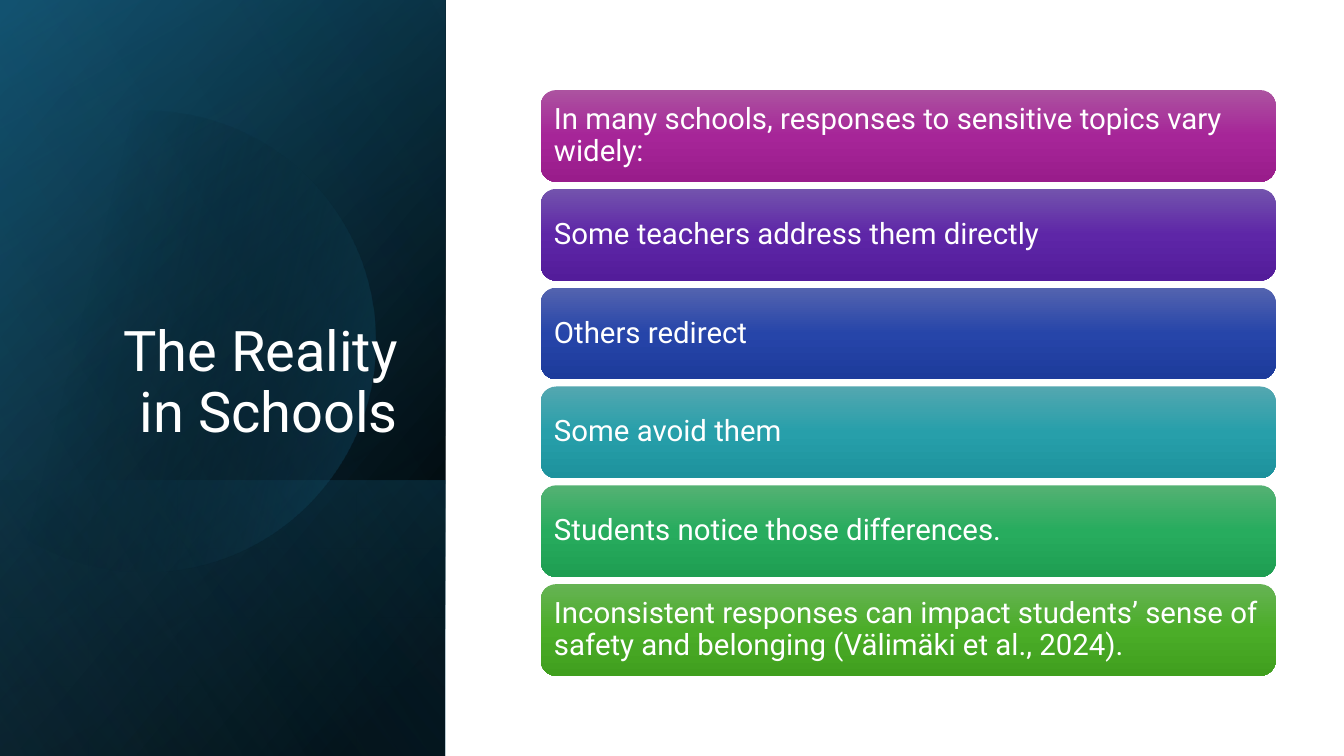
from itertools import pairwise
from math import cos, radians, sin, tan

from lxml import etree
from pptx import Presentation
from pptx.dml.color import RGBColor
from pptx.enum import shapes, text
from pptx.oxml.ns import qn
from pptx.util import Cm, Pt

FONT = "Roboto"
COLORS = {
    "white": "FFFFFF", "black": "000000", "navy": "104862",
    "teal": "156082", "sky": "46B1E1",
}
PANEL_WIDTH = 11.22
SLIDE_HEIGHT = 19.05

# Each card: its text and the top, middle and bottom colours
CARDS = [
    ("In many schools, responses to sensitive topics vary widely:",
     ("AC53A0", "A62598", "991C8B")),
    ("Some teachers address them directly", ("7353AD", "5E26A7", "531C9A")),
    ("Others redirect", ("5363AF", "2645A9", "1D3B9B")),
    ("Some avoid them", ("53A7B0", "279FAA", "1D929D")),
    ("Students notice those differences.", ("54B173", "27AC5E", "1E9E52")),
    ("Inconsistent responses can impact students’ sense of safety and "
     "belonging (Välimäki et al., 2024).", ("66B354", "4BAD28", "409F1E")),
]


def fill_gradient(shape, stops, angle):
    """Fill with stops of (position %, colour, opacity %), without outline."""
    gradient = etree.Element(qn("a:gradFill"), rotWithShape="1")
    stop_list = etree.SubElement(gradient, qn("a:gsLst"))
    for position, color, opacity in stops:
        stop = etree.SubElement(stop_list, qn("a:gs"), pos=str(position * 1000))
        tint = etree.SubElement(stop, qn("a:srgbClr"), val=color)
        if opacity < 100:
            etree.SubElement(tint, qn("a:alpha"), val=str(opacity * 1000))
    etree.SubElement(gradient, qn("a:lin"), ang=str(angle * 60000), scaled="0")
    shape.element.spPr.insert(2, gradient)  # after position and geometry
    shape.line.fill.background()
    shape.shadow.inherit = False


def add_panel(page, top, height, stops, angle):
    """Add a side panel layer, turned a quarter and mirrored."""
    shift = (height - PANEL_WIDTH) / 2
    panel = page.shapes.add_shape(
        shapes.MSO_SHAPE.RECTANGLE,
        Cm(-shift), Cm(top + shift), Cm(height), Cm(PANEL_WIDTH))
    panel.rotation = 90
    panel.element.spPr.find(qn("a:xfrm")).set("flipH", "1")
    fill_gradient(panel, stops, angle)


def add_disc(page, center_x, center_y, radius, stops, angle):
    """Add a disc whose left side is cut off straight."""
    def locate(turn, pull=0):
        """Point on the rim, moved along its tangent by pull radii."""
        a = radians(turn)
        return (Cm(center_x + radius * (cos(a) - pull * sin(a))),
                Cm(center_y + radius * (sin(a) + pull * cos(a))))

    turns = [-134, -90, 0, 90, 134]
    corners = [locate(turn) for turn in turns]
    builder = page.shapes.build_freeform(*corners[0])
    builder.add_line_segments(corners[1:], close=True)
    disc = builder.convert_to_shape()

    # Bend the straight segments along the rim
    segments = list(disc.element.spPr.iter(qn("a:lnTo")))
    for segment, (start, end) in zip(segments, pairwise(turns)):
        pull = 4 / 3 * tan(radians(end - start) / 4)
        segment.tag = qn("a:cubicBezTo")
        controls = (locate(start, pull), locate(end, -pull))
        for place, (x, y) in enumerate(controls):
            segment.insert(place, etree.Element(
                qn("a:pt"), x=str(x - disc.left), y=str(y - disc.top)))
    fill_gradient(disc, stops, angle)


def write_text(frame, words, size, align, anchor):
    frame.word_wrap = True
    frame.auto_size = text.MSO_AUTO_SIZE.NONE
    frame.vertical_anchor = anchor
    para = frame.paragraphs[0]
    para.alignment = align
    para.line_spacing = 0.9
    span = para.add_run()
    span.text = words
    span.font.name = FONT
    span.font.size = Pt(size)
    span.font.color.rgb = RGBColor.from_string(COLORS["white"])


def place_title(page, words):
    title = page.shapes.title
    title.left, title.top = Cm(1.63), Cm(4.68)
    title.width, title.height = Cm(8.65), Cm(6.65)
    write_text(title.text_frame, words, 40,
               text.PP_ALIGN.RIGHT, text.MSO_ANCHOR.BOTTOM)
    page.shapes.element.append(title.element)  # bring above the panel


def add_card(page, top, words, colors):
    card = page.shapes.add_shape(
        shapes.MSO_SHAPE.ROUNDED_RECTANGLE,
        Cm(13.63), Cm(top), Cm(18.52), Cm(2.31))
    fill_gradient(card, [(50 * i, c, 100) for i, c in enumerate(colors)], 90)
    frame = card.text_frame
    frame.margin_left = frame.margin_right = Cm(0.22)
    frame.margin_top = frame.margin_bottom = Cm(0.22)
    write_text(frame, words, 21, text.PP_ALIGN.LEFT, text.MSO_ANCHOR.MIDDLE)


def main():
    deck = Presentation()
    deck.slide_width, deck.slide_height = Cm(33.87), Cm(SLIDE_HEIGHT)
    page = deck.slides.add_slide(deck.slide_layouts[5])
    black, navy, teal, sky = (
        COLORS[name] for name in ("black", "navy", "teal", "sky"))

    # Dark side panel, built from layers
    add_panel(page, 0, SLIDE_HEIGHT, [(8, black, 100), (100, navy, 100)], 50)
    add_panel(page, 0, SLIDE_HEIGHT, [(0, black, 0), (99, teal, 46)], 30)
    add_panel(page, 12.1, 6.95, [(2, teal, 29), (100, black, 30)], 130)
    add_disc(page, 3.66, 8.59, 5.8, [(29, black, 0), (100, teal, 43)], 14)
    add_panel(page, 0, SLIDE_HEIGHT, [(0, black, 0), (99, sky, 11)], 120)

    place_title(page, "The Reality in Schools")

    # Stack of statement cards
    for row, (words, colors) in enumerate(CARDS):
        add_card(page, 2.27 + 2.49 * row, words, colors)

    deck.save("out.pptx")


if __name__ == "__main__":
    main()
